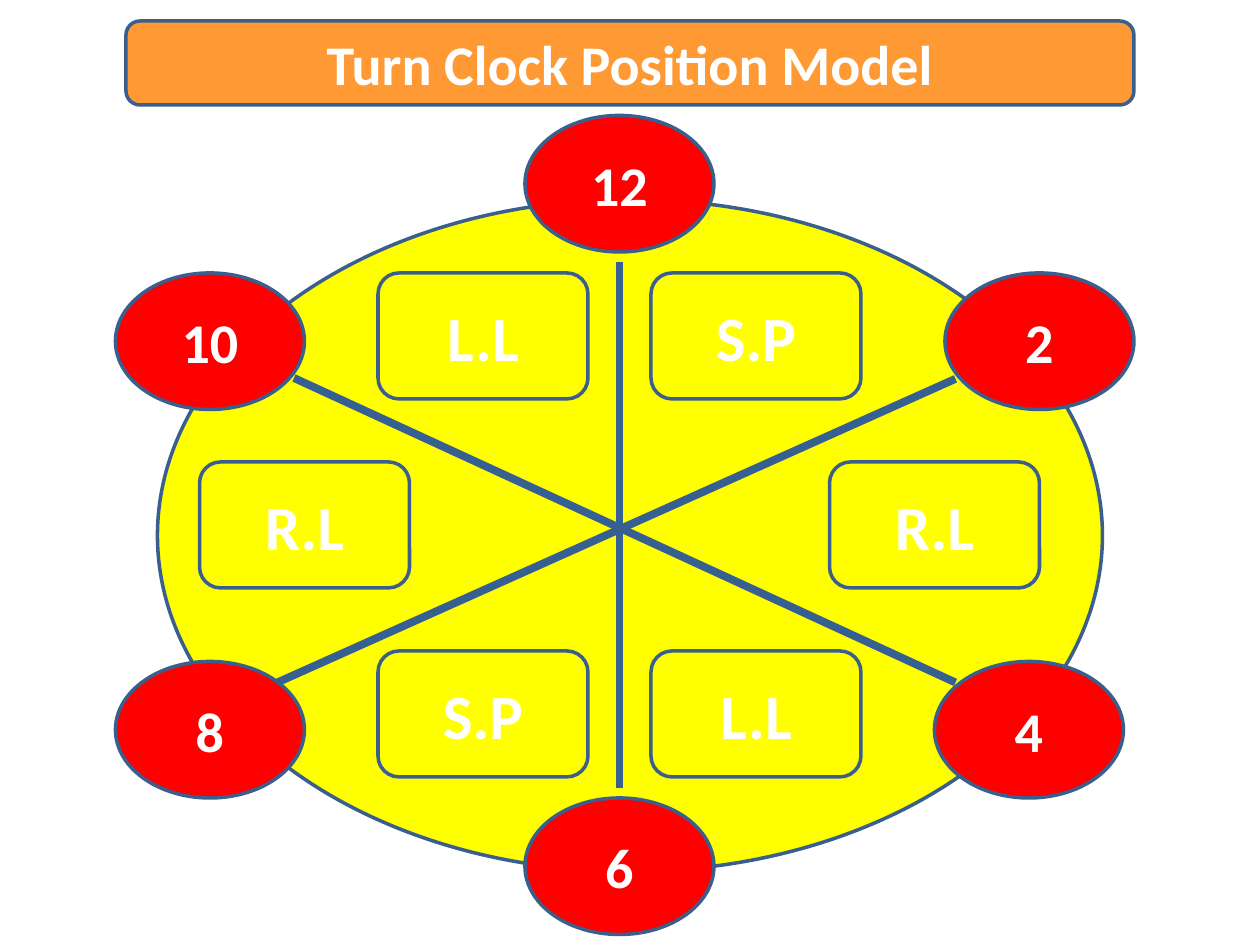
import pptx
import pptx.util
import pptx.dml.color
import pptx.enum.shapes
import pptx.enum.text
import pptx.oxml.ns
import lxml.etree

Pt = pptx.util.Pt
RGBColor = pptx.dml.color.RGBColor
SHAPE = pptx.enum.shapes.MSO_SHAPE

YELLOW = RGBColor(0xFF, 0xFF, 0x00)
RED = RGBColor(0xFF, 0x00, 0x00)
ORANGE = RGBColor(0xFF, 0x99, 0x33)
WHITE = RGBColor(0xFF, 0xFF, 0xFF)
OUTLINE = RGBColor(0x3A, 0x5F, 0x8C)
SPOKE = RGBColor(0x37, 0x60, 0x92)

# All offsets are in points from the top left corner of the clock face.
HOUR_SIZE = (108, 78)
HOURS = [
    ("12", 210, -48),
    ("6", 210, 342),
    ("4", 444, 264),
    ("2", 450, 42),
    ("8", -24, 264),
    ("10", -24, 42),
]
SPOKES = [
    (264, 36, 264, 336),
    (456, 102.5, 68.5, 276),
    (78, 102, 456, 276),
]
SECTOR_SIZE = (120, 72)
SECTORS = [
    ("S.P", 282, 42),
    ("R.L", 24, 150),
    ("R.L", 384, 150),
    ("S.P", 126, 258),
    ("L.L", 282, 258),
    ("L.L", 126, 42),
]


def add_filled_shape(slide, kind, box, fill, text="", size=32):
    shape = slide.shapes.add_shape(kind, *(Pt(length) for length in box))
    shape.shadow.inherit = False
    shape.fill.solid()
    shape.fill.fore_color.rgb = fill
    shape.line.color.rgb = OUTLINE
    shape.line.width = Pt(2)
    if text:
        frame = shape.text_frame
        frame.word_wrap = True
        frame.vertical_anchor = pptx.enum.text.MSO_ANCHOR.MIDDLE
        paragraph = frame.paragraphs[0]
        paragraph.alignment = pptx.enum.text.PP_ALIGN.CENTER
        run = paragraph.add_run()
        run.text = text
        run.font.name = "Calibri"
        run.font.size = Pt(size)
        run.font.bold = True
        run.font.color.rgb = WHITE


def add_spoke(slide, start_x, start_y, end_x, end_y):
    connector = slide.shapes.add_connector(
        pptx.enum.shapes.MSO_CONNECTOR.STRAIGHT,
        Pt(start_x), Pt(start_y), Pt(end_x), Pt(end_y))
    connector.line.color.rgb = SPOKE
    connector.line.width = Pt(4.5)
    properties = connector._element.spPr
    lxml.etree.SubElement(properties, pptx.oxml.ns.qn("a:effectLst"))


def add_clock(slide, box):
    left, top = box[:2]
    add_filled_shape(slide, SHAPE.OVAL, box, YELLOW)
    for hour, x, y in HOURS:
        add_filled_shape(slide, SHAPE.OVAL, (left + x, top + y, *HOUR_SIZE),
                         RED, hour)
    for start_x, start_y, end_x, end_y in SPOKES:
        add_spoke(slide, left + start_x, top + start_y,
                  left + end_x, top + end_y)
    for label, x, y in SECTORS:
        add_filled_shape(slide, SHAPE.ROUNDED_RECTANGLE,
                         (left + x, top + y, *SECTOR_SIZE), YELLOW, label, 36)


def add_title(slide, box):
    add_filled_shape(slide, SHAPE.ROUNDED_RECTANGLE, box, ORANGE,
                     "Turn Clock Position Model")


def main():
    presentation = pptx.Presentation()
    presentation.slide_width = Pt(720)
    presentation.slide_height = Pt(540)
    slide = presentation.slides.add_slide(presentation.slide_layouts[6])
    add_clock(slide, (90, 114, 540, 384))
    add_title(slide, (72, 12, 576, 48))
    presentation.save("out.pptx")


if __name__ == "__main__":
    main()
